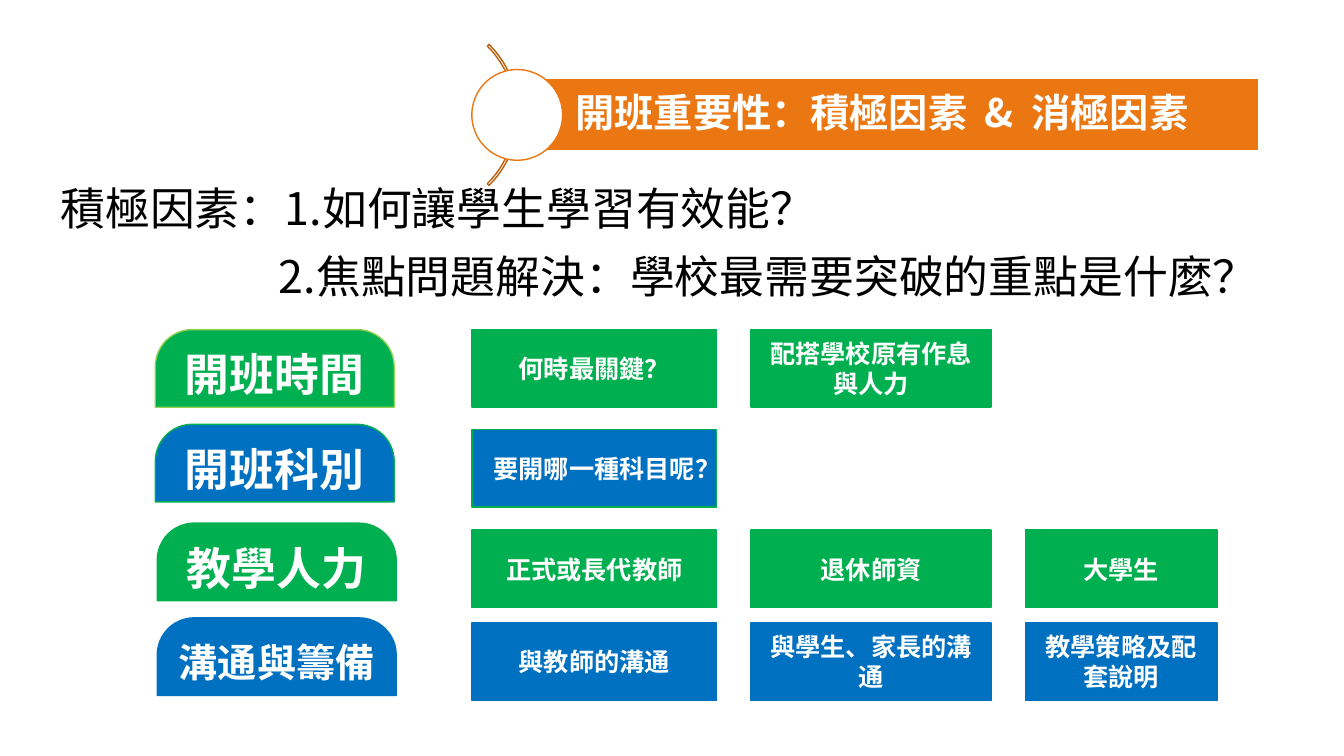
from dataclasses import dataclass

from lxml import etree
from pptx import Presentation
from pptx.dml.color import RGBColor
from pptx.enum.shapes import MSO_SHAPE
from pptx.enum.text import MSO_ANCHOR, MSO_AUTO_SIZE, PP_ALIGN
from pptx.oxml.ns import qn
from pptx.shapes.autoshape import Shape
from pptx.slide import Slide
from pptx.text.text import _Paragraph
from pptx.util import Inches, Pt

ARC = MSO_SHAPE.BLOCK_ARC
CIRCLE = MSO_SHAPE.OVAL
RECTANGLE = MSO_SHAPE.RECTANGLE
TAB = MSO_SHAPE.ROUND_2_SAME_RECTANGLE
MIDDLE = MSO_ANCHOR.MIDDLE
CENTER = PP_ALIGN.CENTER
LEFT = PP_ALIGN.LEFT
NO_FIT = MSO_AUTO_SIZE.NONE
GROW = MSO_AUTO_SIZE.SHAPE_TO_FIT_TEXT

FONT = "Noto Sans CJK SC"
COLORS = {
    "white": "FFFFFF",
    "black": "000000",
    "orange": "EB7712",
    "brown": "BC5F0E",
    "green": "00B050",
    "lime": "92D050",
    "blue": "0070C0",
}
ROW_HEIGHT = 0.77
CARD_COLUMNS = [(4.68, 2.43), (7.45, 2.38), (10.17, 1.9)]


@dataclass
class Place:
    left: float
    top: float
    width: float
    height: float


@dataclass
class Topic:
    name: str
    size: int
    left: float
    tab_top: float
    card_top: float
    fill: str
    tab_line: str
    card_line: str
    cards: list[str]


@dataclass
class Statement:
    text: str
    place: Place
    wrap: bool


TOPICS = [
    Topic("開班時間", 32, 1.54, 3.27, 3.27, "green", "lime", "green",
          ["何時最關鍵？", "配搭學校原有作息與人力"]),
    Topic("開班科別", 32, 1.54, 4.21, 4.26, "blue", "green", "green",
          ["要開哪一種科目呢？"]),
    Topic("教學人力", 32, 1.56, 5.19, 5.26, "green", "green", "green",
          ["正式或長代教師", "退休師資", "大學生"]),
    Topic("溝通與籌備", 28, 1.56, 6.13, 6.18, "blue", "blue", "blue",
          ["與教師的溝通", "與學生、家長的溝通", "教學策略及配套說明"]),
]
STATEMENTS = [
    Statement("積極因素：1.如何讓學生學習有效能？",
              Place(0.47, 1.74, 7.75, 0.64), False),
    Statement("2.焦點問題解決：學校最需要突破的重點是什麼？",
              Place(2.46, 2.42, 10.33, 0.64), True),
]
TITLE_SPANS = [("開班重要性：積極因素", 0), (" ", 630), ("&", 0),
               (" ", 630), ("消極因素", 0)]


def color(name: str) -> RGBColor:
    return RGBColor.from_string(COLORS[name])


def add_span(para: _Paragraph, text: str, size: int, ink: str, bold: bool,
             spacing: int = 0) -> None:
    span = para.add_run()
    span.text = text
    span.font.size = Pt(size)
    span.font.bold = bold
    span.font.name = FONT
    span.font.color.rgb = color(ink)
    properties = span.font._element
    etree.SubElement(properties, qn("a:ea")).set("typeface", FONT)
    if spacing:
        properties.set("spc", str(spacing))


def paint(shape: Shape, fill: str | None, line: str) -> None:
    if fill:
        shape.fill.solid()
        shape.fill.fore_color.rgb = color(fill)
    else:
        shape.fill.background()
    shape.line.color.rgb = color(line)
    shape.line.width = Pt(1)


def add_shape(page: Slide, kind: MSO_SHAPE, place: Place, fill: str | None,
              line: str, adjustments: tuple[float, ...] = ()) -> Shape:
    shape = page.shapes.add_shape(kind, Inches(place.left), Inches(place.top),
                                  Inches(place.width), Inches(place.height))
    for index, value in enumerate(adjustments):
        shape.adjustments[index] = value
    shape.shadow.inherit = False
    paint(shape, fill, line)
    return shape


def add_label(shape: Shape, text: str, size: int) -> None:
    frame = shape.text_frame
    frame.word_wrap = True
    frame.vertical_anchor = MIDDLE
    para = frame.paragraphs[0]
    para.alignment = CENTER
    add_span(para, text, size, "white", True)


def add_banner(page: Slide) -> None:
    title = page.shapes.title
    title.left, title.top = Inches(5.13), Inches(0.78)
    title.width, title.height = Inches(7.35), Inches(0.72)
    paint(title, "orange", "white")
    frame = title.text_frame
    frame.word_wrap = True
    frame.auto_size = NO_FIT
    frame.vertical_anchor = MIDDLE
    frame.margin_left = Inches(0.58)
    frame.margin_right = frame.margin_top = frame.margin_bottom = Inches(0.08)
    para = frame.paragraphs[0]
    para.alignment = LEFT
    para.line_spacing = 0.9
    for text, spacing in TITLE_SPANS:
        add_span(para, text, 28, "white", True, spacing)
    add_shape(page, ARC, Place(3.16, 0.15, 1.98, 1.98), None, "brown",
              (189, 27, 0.012))
    add_shape(page, CIRCLE, Place(4.68, 0.69, 0.9, 0.9), "white", "orange")


def add_statement(page: Slide, statement: Statement) -> None:
    place = statement.place
    box = page.shapes.add_textbox(Inches(place.left), Inches(place.top),
                                  Inches(place.width), Inches(place.height))
    frame = box.text_frame
    frame.word_wrap = statement.wrap
    frame.auto_size = GROW
    para = frame.paragraphs[0]
    para.alignment = CENTER
    add_span(para, statement.text, 32, "black", False)


def add_topic(page: Slide, topic: Topic) -> None:
    tab_place = Place(topic.left, topic.tab_top, 2.37, ROW_HEIGHT)
    tab = add_shape(page, TAB, tab_place, topic.fill, topic.tab_line,
                    (0.478, 0))
    add_label(tab, topic.name, topic.size)
    for (left, width), text in zip(CARD_COLUMNS, topic.cards):
        card_place = Place(left, topic.card_top, width, ROW_HEIGHT)
        card = add_shape(page, RECTANGLE, card_place, topic.fill,
                         topic.card_line)
        add_label(card, text, 18)


def main() -> None:
    deck = Presentation()
    deck.slide_width, deck.slide_height = Inches(13.33), Inches(7.5)
    page = deck.slides.add_slide(deck.slide_layouts[5])
    add_banner(page)
    for statement in STATEMENTS:
        add_statement(page, statement)
    for topic in TOPICS:
        add_topic(page, topic)
    deck.save("out.pptx")


if __name__ == "__main__":
    main()
